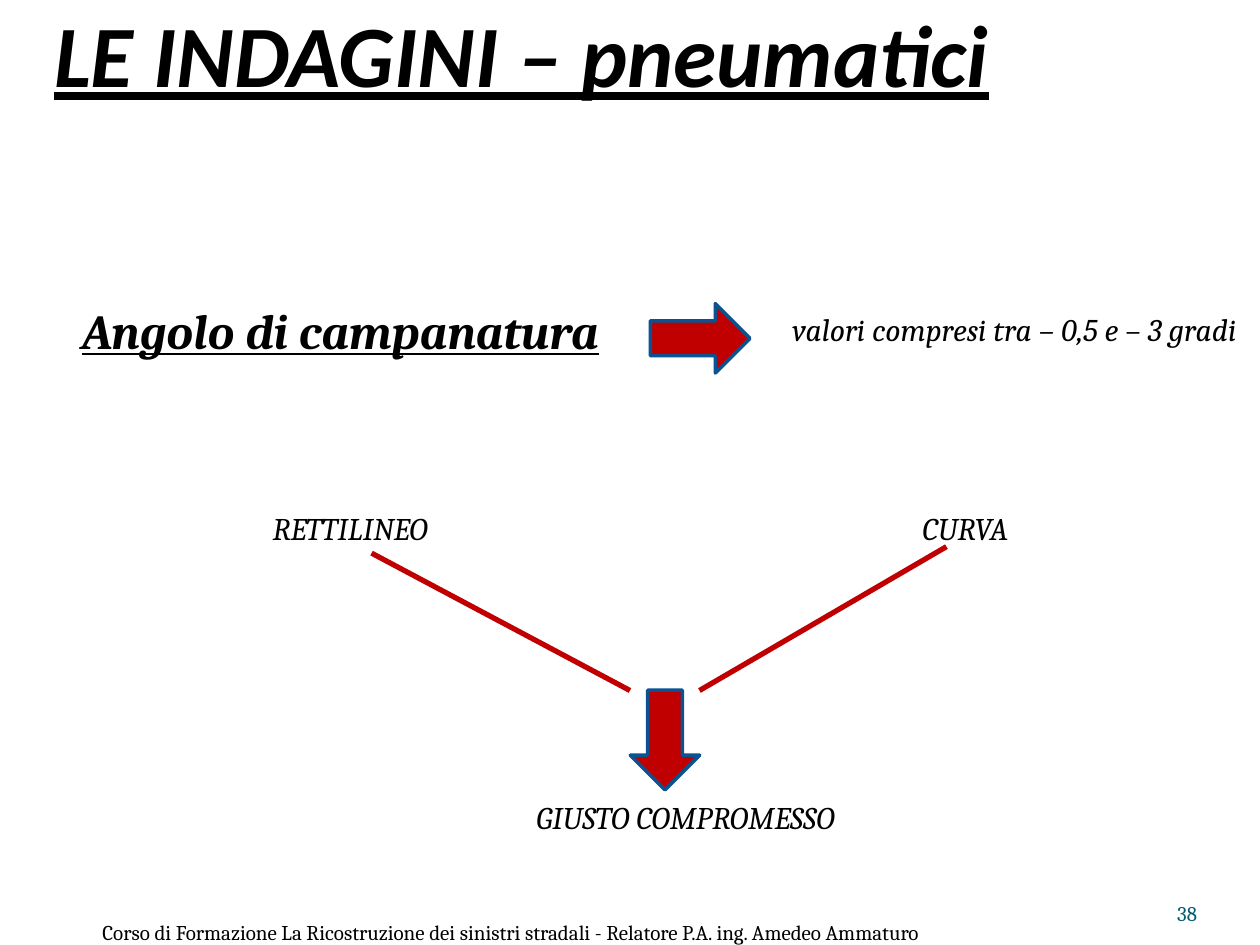
from dataclasses import dataclass

from lxml.etree import SubElement
from pptx import Presentation
from pptx.dml.color import RGBColor as Rgb
from pptx.enum.shapes import MSO_CONNECTOR as Link, MSO_SHAPE as Shape
from pptx.enum.text import MSO_ANCHOR as Anchor, PP_ALIGN as Align
from pptx.oxml.ns import qn
from pptx.util import Cm, Pt


@dataclass(frozen=True)
class Theme:
    black: Rgb = Rgb.from_string("000000")
    red: Rgb = Rgb.from_string("C00000")
    blue: Rgb = Rgb.from_string("0B5292")
    teal: Rgb = Rgb.from_string("045D75")
    head: str = "Calibri"
    body: str = "Cambria"
    title: int = 50
    topic: int = 28
    label: int = 18
    small: int = 12


theme = Theme()
deck = Presentation()
deck.slide_width, deck.slide_height = Cm(25.4), Cm(19.05)
slide = deck.slides.add_slide(deck.slide_layouts[6])
shapes = slide.shapes


def write(text, left, top, width=12.7, height=1.02, *, size=theme.label,
          font=theme.body, color=theme.black, bold=False, italic=True,
          line=False, align=Align.CENTER, anchor=Anchor.TOP,
          pad=(0.25, 0.13, 0.25, 0.13)):
    """Add a one-line text box; lengths in cm, pad is left, top, right, bottom."""
    box = shapes.add_textbox(Cm(left), Cm(top), Cm(width), Cm(height))
    frame = box.text_frame
    frame.word_wrap = True
    frame.vertical_anchor = anchor
    (frame.margin_left, frame.margin_top,
     frame.margin_right, frame.margin_bottom) = map(Cm, pad)
    par = frame.paragraphs[0]
    par.alignment = align
    run = par.add_run()
    run.text = text
    face = run.font
    face.name, face.size, face.color.rgb = font, Pt(size), color
    face.bold, face.italic, face.underline = bold, italic, line


# Title, topic and labels
write("LE INDAGINI – pneumatici", 1.09, -0.28, 22.86, 2.39,
      size=theme.title, font=theme.head, bold=True, line=True,
      align=Align.LEFT, anchor=Anchor.BOTTOM, pad=(0, 0.13, 0, 0))
write("Angolo di campanatura", 0.51, 5.92, height=1.45,
      size=theme.topic, bold=True, line=True)
for text, left, top in (
    ("valori compresi tra – 0,5 e – 3 gradi", 14.1, 6.12),
    ("RETTILINEO", 0.71, 10.13),
    ("CURVA", 13.11, 10.13),
    ("GIUSTO COMPROMESSO", 7.47, 15.95),
):
    write(text, left, top)

# Lines that lead both cases to the compromise
for x1, y1, x2 in ((7.49, 11.15, 12.7), (19.08, 11.02, 14.1)):
    link = shapes.add_connector(Link.STRAIGHT, Cm(x1), Cm(y1), Cm(x2), Cm(13.92))
    link.line.color.rgb = theme.red
    link.line.width = Pt(3)
    SubElement(link._element.spPr, qn("a:effectLst"))

# Block arrows
for left, top, turn in ((13.11, 6.12, 0), (12.4, 14.22, 90)):
    arrow = shapes.add_shape(Shape.RIGHT_ARROW, Cm(left), Cm(top), Cm(2.01), Cm(1.4))
    arrow.rotation = turn
    arrow.shadow.inherit = False
    arrow.fill.solid()
    arrow.fill.fore_color.rgb = theme.red
    arrow.line.color.rgb = theme.blue
    arrow.line.width = Pt(2)

# Footer and page number
small = dict(size=theme.small, italic=False, anchor=Anchor.BOTTOM, pad=(0, 0, 0, 0))
write("Corso di Formazione La Ricostruzione dei sinistri stradali"
      " - Relatore P.A. ing. Amedeo Ammaturo", 0.05, 18.03, 20.5, **small)
write("38", 22.02, 17.65, 2.11, color=theme.teal, align=Align.RIGHT, **small)

deck.save("out.pptx")
